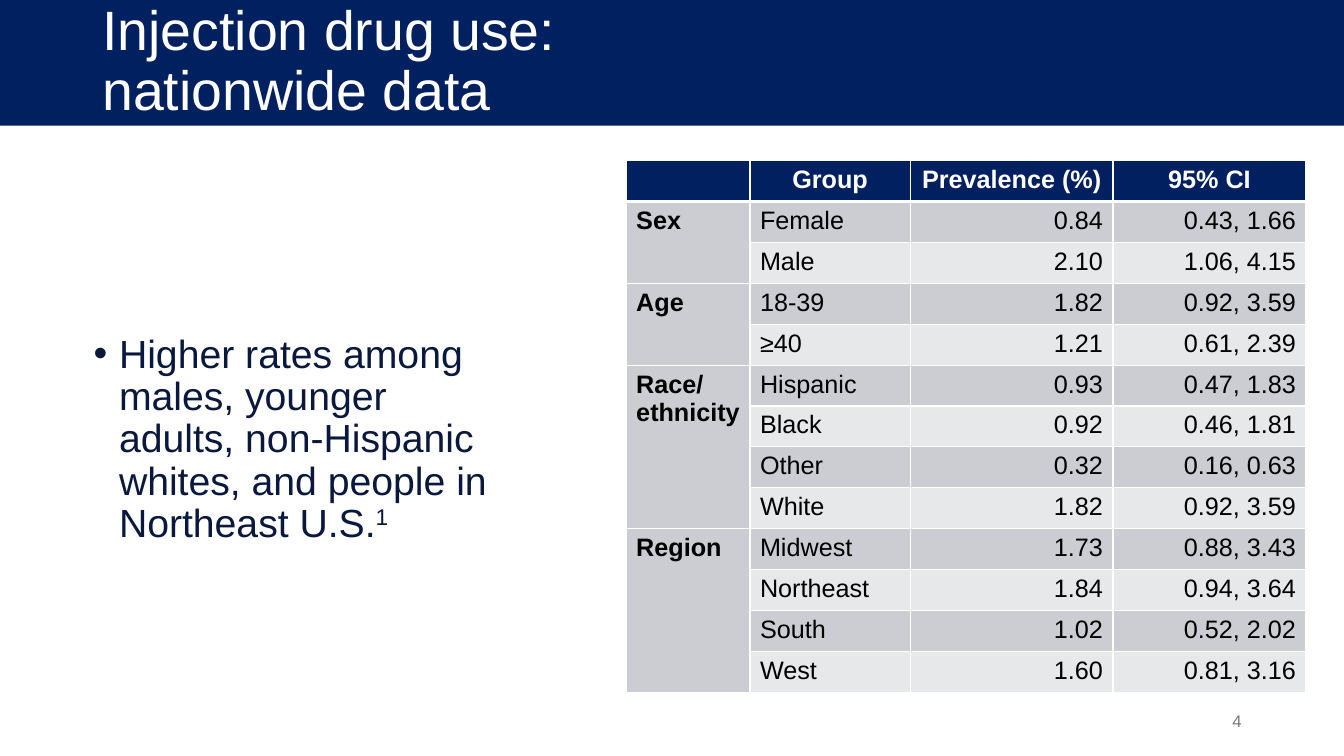
from dataclasses import dataclass
from lxml import etree
from pptx import Presentation
from pptx import util as u
from pptx.dml.color import RGBColor
from pptx.enum import shapes, text
from pptx.oxml.ns import qn

TITLE = "Injection drug use:\vnationwide data"
FINDING = ("Higher rates among males, younger adults, non-Hispanic whites, "
           "and people in Northeast U.S.")
CITATION = "1"
PAGE = "4"
HEADINGS = ["", "Group", "Prevalence (%)", "95% CI"]
CATEGORIES = [
    ("Sex", [("Female", "0.84", "0.43, 1.66"),
             ("Male", "2.10", "1.06, 4.15")]),
    ("Age", [("18-39", "1.82", "0.92, 3.59"),
             ("≥40", "1.21", "0.61, 2.39")]),
    ("Race/\vethnicity", [("Hispanic", "0.93", "0.47, 1.83"),
                          ("Black", "0.92", "0.46, 1.81"),
                          ("Other", "0.32", "0.16, 0.63"),
                          ("White", "1.82", "0.92, 3.59")]),
    ("Region", [("Midwest", "1.73", "0.88, 3.43"),
                ("Northeast", "1.84", "0.94, 3.64"),
                ("South", "1.02", "0.52, 2.02"),
                ("West", "1.60", "0.81, 3.16")]),
]
COLUMN_WIDTHS = [3.12, 4.04, 5.11, 4.86]
ROW_HEIGHT = 1.03


@dataclass(frozen=True)
class Theme:
    font: str = "Arial"
    navy: str = "002060"
    white: str = "FFFFFF"
    black: str = "000000"
    body: str = "09183C"
    gray: str = "797979"
    bands: tuple = ("CCCDD2", "E7E8EA")
    title_size: float = 39.6
    body_size: float = 28
    table_size: float = 18
    page_size: float = 12
    rule: float = 1
    heading_rule: float = 3


theme = Theme()
LEFT, CENTER, RIGHT = text.PP_ALIGN.LEFT, text.PP_ALIGN.CENTER, text.PP_ALIGN.RIGHT


def style(paragraph, size, color, bold=False, align=LEFT):
    paragraph.alignment = align
    for run in paragraph.runs:
        run.font.name = theme.font
        run.font.size = u.Pt(size)
        run.font.bold = bold
        run.font.color.rgb = RGBColor.from_string(color)


def add_text(slide, box, words, size, color, align=LEFT, anchor=text.MSO_ANCHOR.MIDDLE):
    frame = slide.shapes.add_textbox(*map(u.Cm, box)).text_frame
    frame.word_wrap = True
    frame.vertical_anchor = anchor
    frame.text = words
    style(frame.paragraphs[0], size, color, align=align)
    return frame.paragraphs[0]


def add_rules(cell, top, bottom):
    properties = cell._tc.get_or_add_tcPr()
    for side, width in (("L", theme.rule), ("R", theme.rule), ("T", top), ("B", bottom)):
        line = etree.SubElement(properties, qn(f"a:ln{side}"), w=str(u.Pt(width)))
        fill = etree.SubElement(line, qn("a:solidFill"))
        etree.SubElement(fill, qn("a:srgbClr"), val=theme.white)


def fill_cell(cell, words, fill, color, bold, align, top, bottom):
    add_rules(cell, top, bottom)
    cell.fill.solid()
    cell.fill.fore_color.rgb = RGBColor.from_string(fill)
    cell.text = words
    style(cell.text_frame.paragraphs[0], theme.table_size, color, bold, align)


def add_prevalence(slide):
    rows = [(name if i == 0 else "", *values)
            for name, groups in CATEGORIES for i, values in enumerate(groups)]
    count = len(rows) + 1
    prevalence = slide.shapes.add_table(
        count, len(HEADINGS), u.Cm(15.78), u.Cm(4.05),
        u.Cm(sum(COLUMN_WIDTHS)), u.Cm(count * ROW_HEIGHT)).table
    for column, width in zip(prevalence.columns, COLUMN_WIDTHS):
        column.width = u.Cm(width)
    for row in prevalence.rows:
        row.height = u.Cm(ROW_HEIGHT)
    for c, heading in enumerate(HEADINGS):
        fill_cell(prevalence.cell(0, c), heading, theme.navy, theme.white, True,
                  CENTER, theme.rule, theme.heading_rule)
    for r, row in enumerate(rows):
        top = theme.heading_rule if r == 0 else theme.rule
        for c, words in enumerate(row):
            band = theme.bands[0 if c == 0 else r % 2]
            fill_cell(prevalence.cell(r + 1, c), words, band, theme.black, c == 0,
                      RIGHT if c > 1 else LEFT, top, theme.rule)
    first = 1
    for _, groups in CATEGORIES:
        last = first + len(groups) - 1
        prevalence.cell(first, 0).merge(prevalence.cell(last, 0))
        first = last + 1


def add_finding(slide):
    finding = add_text(slide, (2.11, 8.3, 10.95, 9.86), FINDING, theme.body_size,
                       theme.body, anchor=text.MSO_ANCHOR.TOP)
    properties = finding._p.get_or_add_pPr()
    properties.set("marL", str(u.Cm(0.64)))
    properties.set("indent", str(-u.Cm(0.64)))
    etree.SubElement(properties, qn("a:buFont"), typeface=theme.font)
    etree.SubElement(properties, qn("a:buChar"), char="•")
    finding.line_spacing = 0.9
    citation = finding.add_run()
    citation.text = CITATION
    style(finding, theme.body_size, theme.body)
    citation._r.get_or_add_rPr().set("baseline", "30000")


def main():
    deck = Presentation()
    deck.slide_width, deck.slide_height = u.Cm(33.87), u.Cm(19.05)
    slide = deck.slides.add_slide(deck.slide_layouts[6])
    banner = slide.shapes.add_shape(shapes.MSO_SHAPE.RECTANGLE, 0, 0,
                                    deck.slide_width, u.Cm(3.17))
    banner.shadow.inherit = False
    banner.fill.solid()
    banner.fill.fore_color.rgb = RGBColor.from_string(theme.navy)
    banner.line.fill.background()
    title = add_text(slide, (2.33, 0, 21.43, 3.17), TITLE, theme.title_size, theme.white)
    title.line_spacing = 0.9
    add_prevalence(slide)
    add_finding(slide)
    add_text(slide, (23.92, 17.65, 7.62, 1.01), PAGE, theme.page_size, theme.gray, RIGHT)
    deck.save("out.pptx")


if __name__ == "__main__":
    main()
